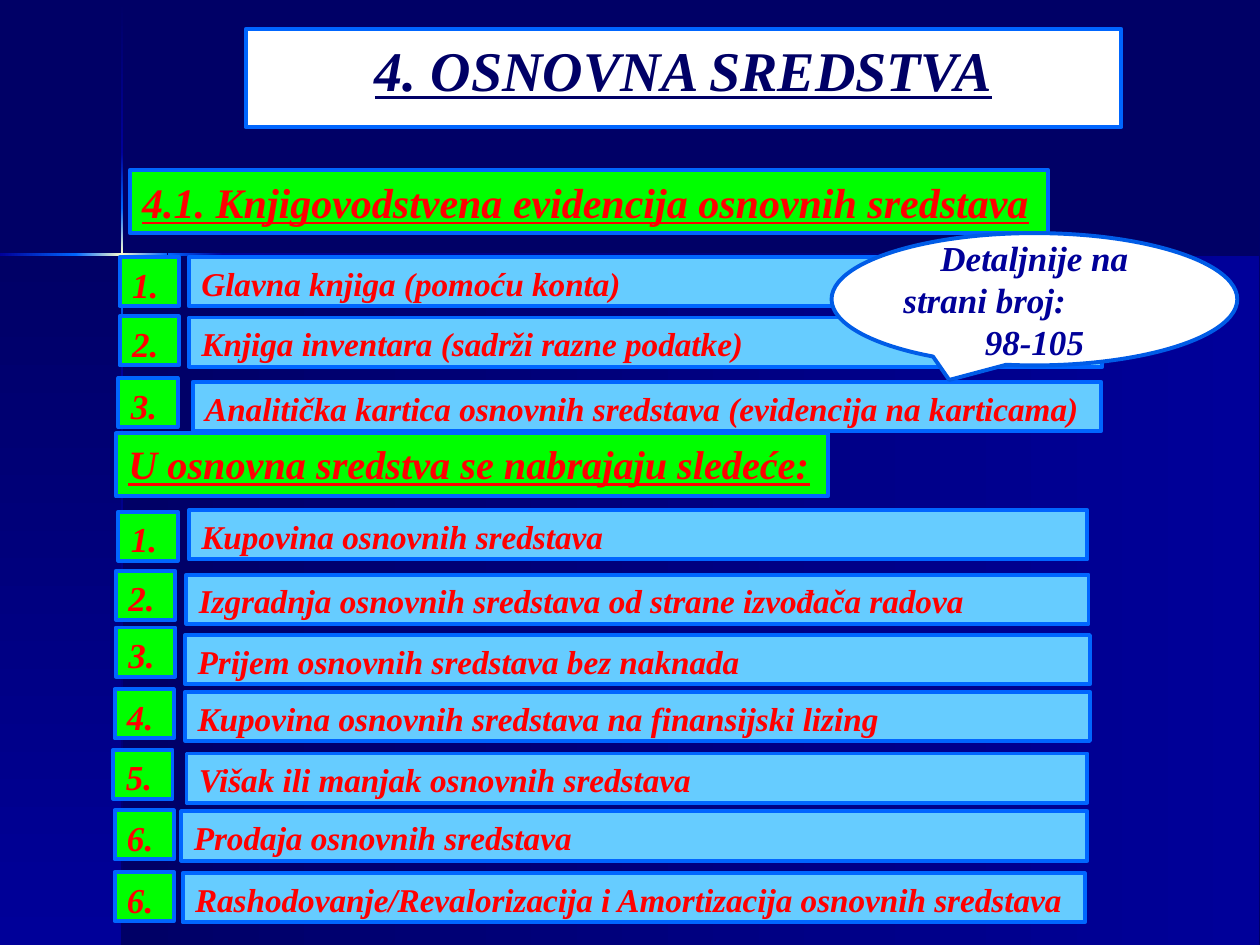
from copy import deepcopy

from pptx import Presentation
from pptx.dml.color import RGBColor
from pptx.enum.shapes import MSO_SHAPE
from pptx.enum.text import MSO_ANCHOR, PP_ALIGN
from pptx.oxml.ns import qn
from pptx.util import Inches, Pt

NAVY, BLUE, BRIGHT, CREAM = "000066", "000099", "0066FF", "FFFFCC"
RED, GREEN, SKY, WHITE = "FF0000", "00FF00", "66CCFF", "FFFFFF"


def rgb(color):
    return RGBColor.from_string(color)


def add_box(box, lines, size, fill, color=RED, line=BRIGHT, align=PP_ALIGN.LEFT,
            underline=False, shape=MSO_SHAPE.RECTANGLE):
    """Add an outlined shape with one bold italic paragraph per line of text."""
    sp = s.shapes.add_shape(shape, *map(Inches, box))
    sp.shadow.inherit = False
    sp.fill.solid()
    sp.fill.fore_color.rgb = rgb(fill)
    sp.line.color.rgb = rgb(line)
    sp.line.width = Pt(2.25)
    tf = sp.text_frame
    tf.word_wrap = True
    tf.vertical_anchor = MSO_ANCHOR.TOP
    tf.text = "\n".join(lines)
    for p in tf.paragraphs:
        p.alignment = align
        p.font.name = "Times New Roman"
        p.font.size = Pt(size)
        p.font.bold = p.font.italic = True
        p.font.underline = underline
        p.font.color.rgb = rgb(color)
    return sp


prs = Presentation()
prs.slide_width, prs.slide_height = Inches(10), Inches(7.5)
s = prs.slides.add_slide(prs.slide_layouts[6])
s.background.fill.solid()
s.background.fill.fore_color.rgb = rgb(NAVY)

# Background panels and the glowing cross: box, colours, vertical gradient
GLOW = (BRIGHT, CREAM, BRIGHT)
gradients = [
    ((0.97, 2.02, 9.02, 5.48), (NAVY, BLUE), False),
    ((0, 2.02, 0.97, 5.48), (NAVY, BLUE), True),
    ((0.96, 0.01, 0.02, 1.21), (NAVY, BLUE), True),
    ((0.96, 2.82, 0.02, 4.68), (BLUE, NAVY), True),
    ((1.77, 2.01, 8.22, 0.02), (BLUE, NAVY), False),
    ((0.96, 2.38, 0.02, 0.44), (BRIGHT, BLUE), True),
    ((0.96, 1.21, 0.02, 0.44), (BLUE, BRIGHT), True),
    ((0.96, 1.65, 0.02, 0.73), GLOW, True),
    ((0, 2.01, 0.61, 0.02), (BLUE, BRIGHT), False),
    ((1.33, 2.01, 0.44, 0.02), (BRIGHT, BLUE), False),
    ((0.6, 2.01, 0.73, 0.02), GLOW, False),
]
for box, colors, vertical in gradients:
    sp = s.shapes.add_shape(MSO_SHAPE.RECTANGLE, *map(Inches, box))
    sp.shadow.inherit = False
    sp.line.fill.background()
    sp.fill.gradient()
    sp.fill.gradient_angle = 270 if vertical else 0
    if len(colors) == 3:
        stops = sp.fill._xPr.find(qn("a:gradFill")).find(qn("a:gsLst"))
        stops.append(deepcopy(stops[-1]))
    for i, (stop, color) in enumerate(zip(sp.fill.gradient_stops, colors)):
        stop.color.rgb = rgb(color)
        stop.position = i / (len(colors) - 1)

# Title and section headings
add_box((1.95, 0.23, 6.95, 0.78), ["4. OSNOVNA SREDSTVA"], 32, WHITE, NAVY,
        align=PP_ALIGN.CENTER, underline=True)
add_box((1.03, 1.35, 7.29, 0.5), ["4.1. Knjigovodstvena evidencija osnovnih sredstava"],
        24, GREEN, align=PP_ALIGN.JUSTIFY, underline=True)
add_box((0.92, 3.44, 5.65, 0.5), ["U osnovna sredstva se nabrajaju sledeće:"],
        23, GREEN, align=PP_ALIGN.JUSTIFY, underline=True)

# Rows: number, its left and top, then text, its left, top and width
rows = [
    ("1.", 0.95, 2.04, "Glavna knjiga (pomoću konta)", 1.5, 2.04, 7.27),
    ("2.", 0.95, 2.51, "Knjiga inventara (sadrži razne podatke)", 1.5, 2.52, 7.25),
    ("3.", 0.94, 3.0, "Analitička kartica osnovnih sredstava (evidencija na karticama)",
     1.53, 3.03, 7.21),
    ("1.", 0.94, 4.06, "Kupovina osnovnih sredstava", 1.5, 4.05, 7.13),
    ("2.", 0.92, 4.53, "Izgradnja osnovnih sredstava od strane izvođača radova",
     1.48, 4.56, 7.16),
    ("3.", 0.92, 4.98, "Prijem osnovnih sredstava bez naknada", 1.47, 5.04, 7.18),
    ("4.", 0.91, 5.47, "Kupovina osnovnih sredstava na finansijski lizing",
     1.47, 5.49, 7.18),
    ("5.", 0.9, 5.95, "Višak ili manjak osnovnih sredstava", 1.48, 5.98, 7.15),
    ("6.", 0.91, 6.43, "Prodaja osnovnih sredstava", 1.44, 6.44, 7.19),
    ("6.", 0.91, 6.92, "Rashodovanje/Revalorizacija i Amortizacija osnovnih sredstava",
     1.45, 6.93, 7.16),
]
for number, num_x, num_y, text, x, y, w in rows:
    add_box((num_x, num_y, 0.47, 0.39), [number], 20, GREEN)
    add_box((x, y, w, 0.39), [text], 19, SKY)

# Page reference callout
callout = add_box((6.6, 1.85, 3.22, 1.05), ["Detaljnije na", "strani broj:", "98-105"],
                  20, WHITE, BLUE, "005CE7", PP_ALIGN.CENTER,
                  shape=MSO_SHAPE.OVAL_CALLOUT)
callout.adjustments[0], callout.adjustments[1] = -0.21, 0.61
callout.text_frame.vertical_anchor = MSO_ANCHOR.MIDDLE
callout.text_frame.paragraphs[1].alignment = PP_ALIGN.LEFT

prs.save("out.pptx")
